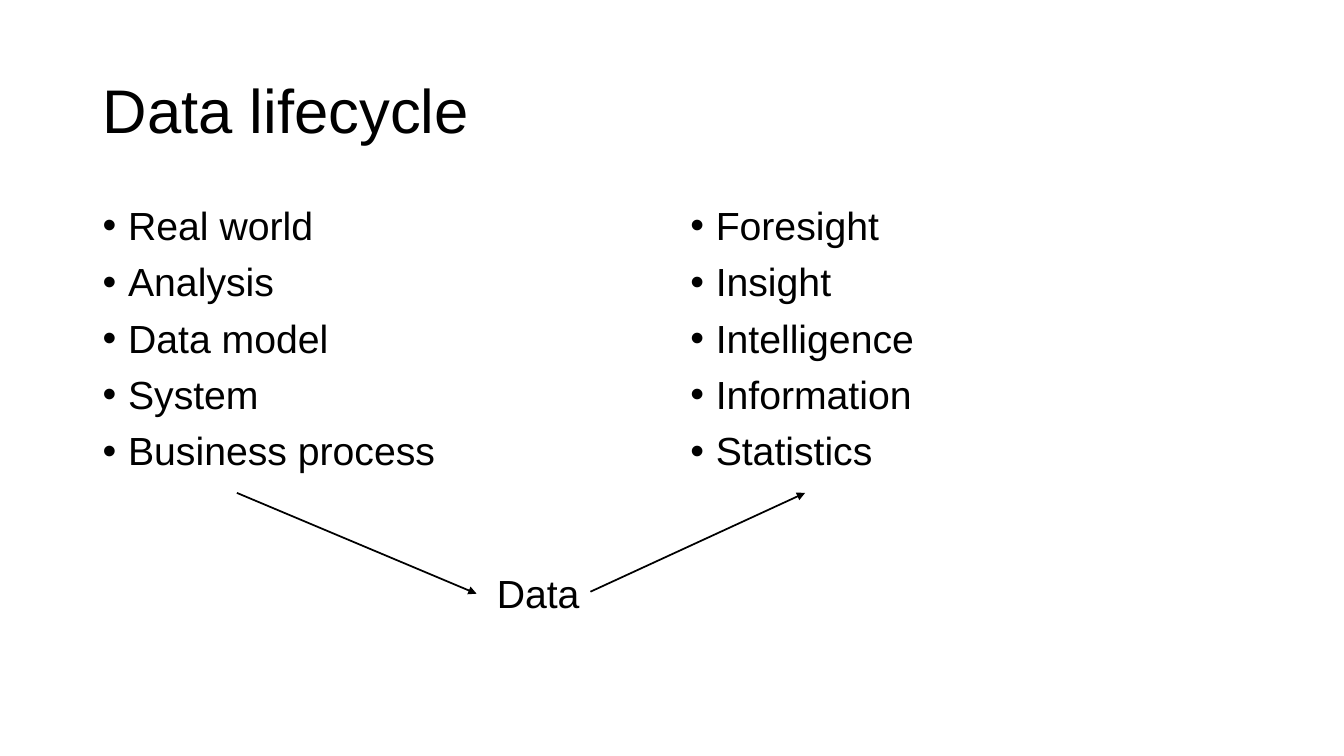
from lxml import etree
from pptx import Presentation
from pptx.dml.color import RGBColor
from pptx.enum import shapes, text
from pptx.oxml import ns
from pptx.util import Cm, Pt

BLACK = RGBColor(0x00, 0x00, 0x00)
FONT = "Arial"

TITLE = "Data lifecycle"
COLUMNS = [
    ["Real world", "Analysis", "Data model", "System", "Business process"],
    ["Foresight", "Insight", "Intelligence", "Information", "Statistics"],
]
HUB = "Data"

# Lengths in centimetres
LEFT, COLUMN_TOP = 2.34, 5.08
COLUMN_WIDTH, COLUMN_HEIGHT, COLUMN_GAP = 14.4, 12.09, 0.41
INDENT = 0.64
ARROWS = [
    ((5.97, 12.42), (12.01, 14.96)),
    ((14.88, 14.91), (20.29, 12.42)),
]


def add_text(slide, box, lines, size, line_spacing=1.0):
    frame = slide.shapes.add_textbox(*map(Cm, box)).text_frame
    frame.word_wrap = True
    frame.text = "\n".join(lines)
    for paragraph in frame.paragraphs:
        paragraph.line_spacing = line_spacing
        for run in paragraph.runs:
            run.font.name = FONT
            run.font.size = Pt(size)
            run.font.color.rgb = BLACK
    return frame


def add_bullets(frame):
    for index, paragraph in enumerate(frame.paragraphs):
        if index:
            paragraph.space_before = Pt(10)
        properties = paragraph._p.get_or_add_pPr()
        properties.set("marL", str(Cm(INDENT)))
        properties.set("indent", str(-Cm(INDENT)))
        etree.SubElement(properties, ns.qn("a:buFont")).set("typeface", FONT)
        etree.SubElement(properties, ns.qn("a:buChar")).set("char", "•")


def add_arrow(slide, start, end):
    arrow = slide.shapes.add_connector(
        shapes.MSO_CONNECTOR.STRAIGHT, *map(Cm, start + end))
    arrow.line.color.rgb = BLACK
    arrow.line.width = Pt(1.25)
    outline = arrow.line._get_or_add_ln()
    etree.SubElement(outline, ns.qn("a:tailEnd")).set("type", "triangle")
    etree.SubElement(arrow._element.spPr, ns.qn("a:effectLst"))


def main():
    deck = Presentation()
    deck.slide_width, deck.slide_height = Cm(33.87), Cm(19.05)
    slide = deck.slides.add_slide(deck.slide_layouts[6])

    title = add_text(slide, (LEFT, 1.02, 25.98, 3.68), [TITLE], 44, 0.9)
    title.vertical_anchor = text.MSO_ANCHOR.MIDDLE

    for index, stages in enumerate(COLUMNS):
        left = LEFT + index * (COLUMN_WIDTH + COLUMN_GAP)
        box = (left, COLUMN_TOP, COLUMN_WIDTH, COLUMN_HEIGHT)
        add_bullets(add_text(slide, box, stages, 28, 0.9))

    hub = add_text(slide, (12.27, 14.22, 2.62, 1.45), [HUB], 28)
    hub.word_wrap = False
    hub.auto_size = text.MSO_AUTO_SIZE.SHAPE_TO_FIT_TEXT

    for start, end in ARROWS:
        add_arrow(slide, start, end)

    deck.save("out.pptx")


if __name__ == "__main__":
    main()
